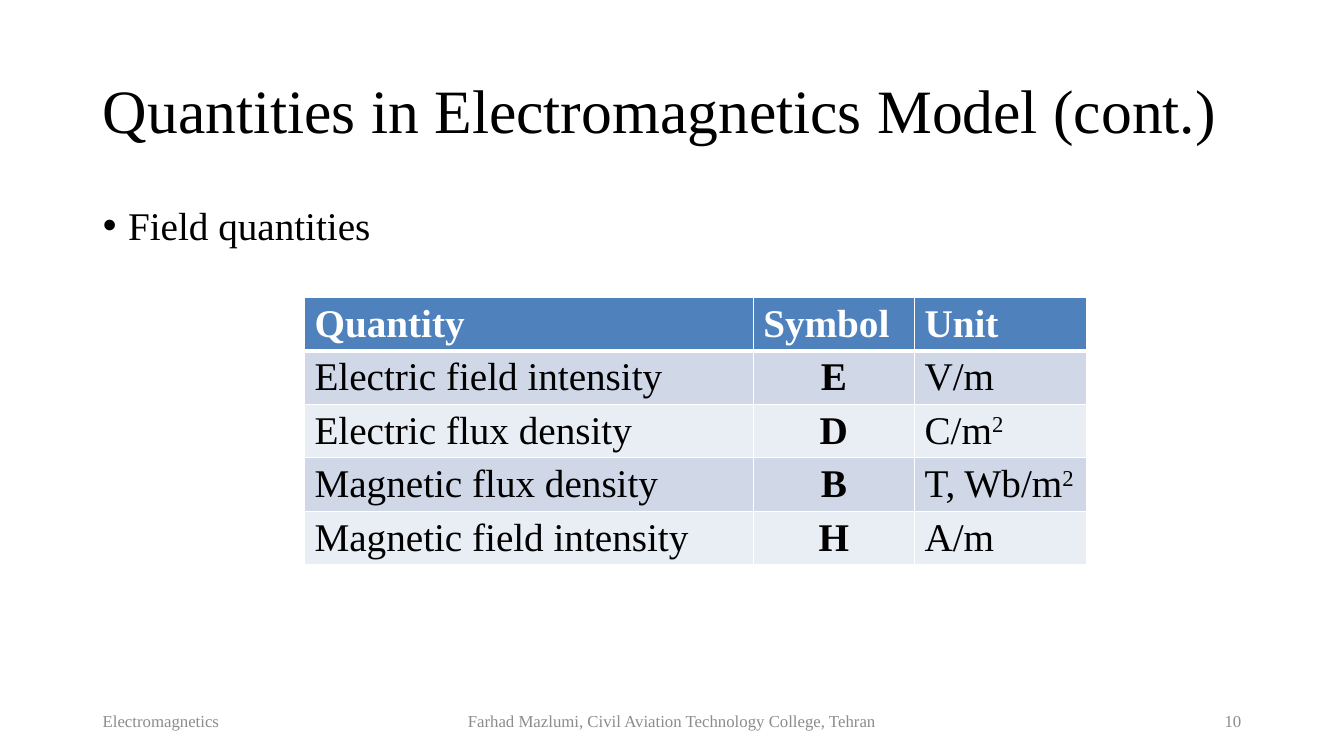
from lxml import etree
from pptx import Presentation
from pptx.dml.color import RGBColor
from pptx.enum.text import MSO_ANCHOR, MSO_AUTO_SIZE, PP_ALIGN
from pptx.oxml.ns import qn
from pptx.util import Inches, Pt

LEFT, CENTER, RIGHT = PP_ALIGN.LEFT, PP_ALIGN.CENTER, PP_ALIGN.RIGHT
TOP, MIDDLE = MSO_ANCHOR.TOP, MSO_ANCHOR.MIDDLE
NO_FIT = MSO_AUTO_SIZE.NONE

# Content; ^ raises the text that follows it
TITLE = "Quantities in Electromagnetics Model (cont.)"
TOPIC = "Field quantities"
QUANTITIES = [
    ("Quantity", "Symbol", "Unit"),
    ("Electric field intensity", "E", "V/m"),
    ("Electric flux density", "D", "C/m^2"),
    ("Magnetic flux density", "B", "T, Wb/m^2"),
    ("Magnetic field intensity", "H", "A/m"),
]
FOOTER = [  # text, width, alignment
    ("Electromagnetics", 3, LEFT),
    ("Farhad Mazlumi, Civil Aviation Technology College, Tehran", 4.5, CENTER),
    ("10", 3, RIGHT),
]

# Format
FONT = "Times New Roman"
COLORS = {"text": "000000", "footer": "8C8C8C", "white": "FFFFFF",
          "header": "4F81BD", "odd": "D0D8E8", "even": "E9EDF4"}
WIDTH, HEIGHT = 13.33, 7.5
MARGIN = 0.92
INNER = WIDTH - 2 * MARGIN
TABLE_LEFT, TABLE_TOP = 3.02, 2.95
COLUMNS, ROW = (4.45, 1.6, 1.71), 0.53


def write(frame, text, size=28, color="text", bold=False, align=LEFT,
          anchor=TOP, spacing=None):
    """Fill a text frame with one formatted paragraph and return it."""
    frame.word_wrap = True
    frame.vertical_anchor = anchor
    paragraph = frame.paragraphs[0]
    paragraph.alignment = align
    paragraph.line_spacing = spacing
    for level, part in enumerate(text.split("^")):
        run = paragraph.add_run()
        run.text = part
        run.font.name = FONT
        run.font.size = Pt(size)
        run.font.bold = bold
        run.font.color.rgb = RGBColor.from_string(COLORS[color])
        if level:
            run.font._element.set("baseline", "30000")
    return paragraph


def place(shape, left, top, width, height):
    shape.left, shape.top = Inches(left), Inches(top)
    shape.width, shape.height = Inches(width), Inches(height)


def add_borders(cell, bottom):
    properties = cell._tc.get_or_add_tcPr()
    for side, points in (("L", 1), ("R", 1), ("T", 1), ("B", bottom)):
        line = etree.SubElement(properties, qn(f"a:ln{side}"), w=str(Pt(points)))
        fill = etree.SubElement(line, qn("a:solidFill"))
        etree.SubElement(fill, qn("a:srgbClr"), val=COLORS["white"])


def main():
    deck = Presentation()
    deck.slide_width, deck.slide_height = Inches(WIDTH), Inches(HEIGHT)
    slide = deck.slides.add_slide(deck.slide_layouts[1])

    # Title and topic
    title, body = slide.placeholders
    place(title, MARGIN, 0.4, INNER, 1.45)
    place(body, MARGIN, 2, INNER, 4.76)
    title.text_frame.auto_size = body.text_frame.auto_size = NO_FIT
    write(title.text_frame, TITLE, size=44, anchor=MIDDLE, spacing=0.9)
    topic = write(body.text_frame, TOPIC, spacing=0.9)
    topic.space_before = Pt(10)
    indent = Inches(0.25)
    topic_format = topic._p.get_or_add_pPr()
    topic_format.set("marL", str(indent))
    topic_format.set("indent", str(-indent))
    etree.SubElement(topic_format, qn("a:buFont"), typeface="Arial")
    etree.SubElement(topic_format, qn("a:buChar"), char="•")

    # Table of quantities
    table = slide.shapes.add_table(
        len(QUANTITIES), len(COLUMNS), Inches(TABLE_LEFT), Inches(TABLE_TOP),
        Inches(sum(COLUMNS)), Inches(ROW * len(QUANTITIES))).table
    for column, width in zip(table.columns, COLUMNS):
        column.width = Inches(width)
    for r, quantity in enumerate(QUANTITIES):
        table.rows[r].height = Inches(ROW)
        header = r == 0
        shade = "header" if header else "odd" if r % 2 else "even"
        for c, text in enumerate(quantity):
            cell = table.cell(r, c)
            symbol = c == 1 and not header
            add_borders(cell, bottom=3 if header else 1)
            cell.fill.solid()
            cell.fill.fore_color.rgb = RGBColor.from_string(COLORS[shade])
            write(cell.text_frame, text, color="white" if header else "text",
                  bold=header or symbol, align=CENTER if symbol else LEFT)

    # Footer, spread evenly between the margins
    gap = (INNER - sum(width for _, width, _ in FOOTER)) / (len(FOOTER) - 1)
    left = MARGIN
    for text, width, align in FOOTER:
        note = slide.shapes.add_textbox(
            Inches(left), Inches(6.95), Inches(width), Inches(0.4))
        write(note.text_frame, text, size=12, color="footer", align=align,
              anchor=MIDDLE)
        left += width + gap

    deck.save("out.pptx")


if __name__ == "__main__":
    main()
